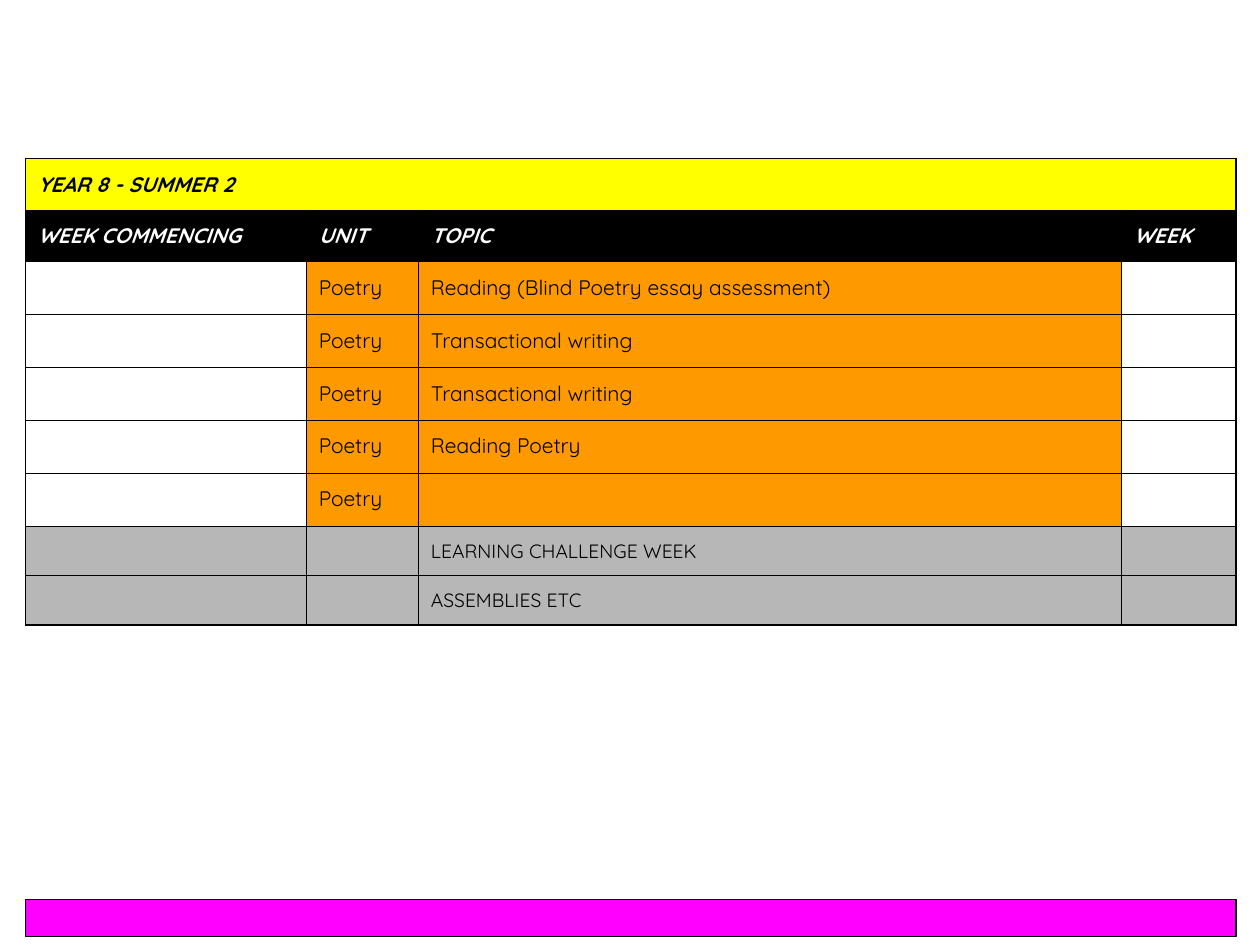
from pptx import Presentation
from pptx.dml.color import RGBColor
from pptx.enum.shapes import MSO_SHAPE
from pptx.oxml import parse_xml
from pptx.oxml.ns import nsdecls
from pptx.util import Inches, Pt

BLACK = RGBColor(0x00, 0x00, 0x00)
WHITE = RGBColor(0xFF, 0xFF, 0xFF)
YELLOW = RGBColor(0xFF, 0xFF, 0x00)
ORANGE = RGBColor(0xFF, 0x99, 0x00)
GREY = RGBColor(0xB7, 0xB7, 0xB7)
MAGENTA = RGBColor(0xFF, 0x00, 0xFF)

LEFT, WIDTH = 0.2, 9.61
COLUMN_WIDTHS = [2.23, 0.89, 5.58, 0.91]
HEADINGS = ["WEEK COMMENCING", "UNIT", "TOPIC", "WEEK"]
TOPICS = [
    "Reading (Blind Poetry essay assessment)",
    "Transactional writing",
    "Transactional writing",
    "Reading Poetry",
    "",
]
CLOSING_WEEKS = ["LEARNING CHALLENGE WEEK", "ASSEMBLIES ETC"]


class PlanSlide:
    """Holds the plan's style and the current slide."""

    font = "Quicksand"
    line_width = Pt(0.75)

    def __init__(self, prs):
        self.s = prs.slides.add_slide(prs.slide_layouts[6])

    def table(self, top, widths, heights):
        frame = self.s.shapes.add_table(
            len(heights), len(widths), Inches(LEFT), Inches(top),
            Inches(sum(widths)), Inches(sum(heights)))
        table = frame.table
        for column, width in zip(table.columns, widths):
            column.width = Inches(width)
        for row, height in zip(table.rows, heights):
            row.height = Inches(height)
        return table

    def borders(self, cell):
        tcPr = cell._tc.get_or_add_tcPr()
        for side in ("lnL", "lnR", "lnT", "lnB"):
            tcPr.append(parse_xml(
                f'<a:{side} {nsdecls("a")} w="{self.line_width}"><a:solidFill>'
                f'<a:srgbClr val="{BLACK}"/></a:solidFill></a:{side}>'))

    def cell(self, cell, text, fill, color=BLACK, size=12, strong=False):
        self.borders(cell)
        if fill is None:
            cell.fill.background()
        else:
            cell.fill.solid()
            cell.fill.fore_color.rgb = fill
        cell.margin_left = cell.margin_right = Inches(0.1)
        cell.margin_top = cell.margin_bottom = Inches(0.1 if text else 0.05)
        p = cell.text_frame.paragraphs[0]
        if text:
            p.add_run().text = text
        p.font.name = self.font
        p.font.size = Pt(size)
        p.font.bold = p.font.italic = strong
        p.font.color.rgb = color

    def row(self, table, index, texts, fills, **style):
        for column, (text, fill) in enumerate(zip(texts, fills)):
            self.cell(table.cell(index, column), text, fill, **style)

    def bar(self, top, height, fill):
        sp = self.s.shapes.add_shape(
            MSO_SHAPE.RECTANGLE, Inches(LEFT), Inches(top),
            Inches(WIDTH), Inches(height))
        sp.shadow.inherit = False
        sp.fill.solid()
        sp.fill.fore_color.rgb = fill
        sp.line.color.rgb = BLACK
        sp.line.width = self.line_width


def main():
    prs = Presentation()
    prs.slide_width, prs.slide_height = Inches(10), Inches(7.5)
    plan = PlanSlide(prs)

    # Term title and column headings
    heights = [0.39] * 2 + [0.42] * len(TOPICS) + [0.38] * len(CLOSING_WEEKS)
    table = plan.table(1.26, COLUMN_WIDTHS, heights)
    plan.row(table, 0, ["YEAR 8 - SUMMER 2", "", "", ""], [YELLOW] * 4, strong=True)
    table.cell(0, 0).merge(table.cell(0, 3))
    plan.row(table, 1, HEADINGS, [BLACK] * 4, color=WHITE, strong=True)

    # Teaching weeks
    for i, topic in enumerate(TOPICS, start=2):
        plan.row(table, i, ["", "Poetry", topic, ""], [None, ORANGE, ORANGE, None])

    # Closing weeks
    for i, event in enumerate(CLOSING_WEEKS, start=2 + len(TOPICS)):
        plan.row(table, i, ["", "", event, ""], [GREY] * 4, size=11)

    # Footer bar
    plan.bar(7.14, 0.29, MAGENTA)

    prs.save("out.pptx")


if __name__ == "__main__":
    main()
